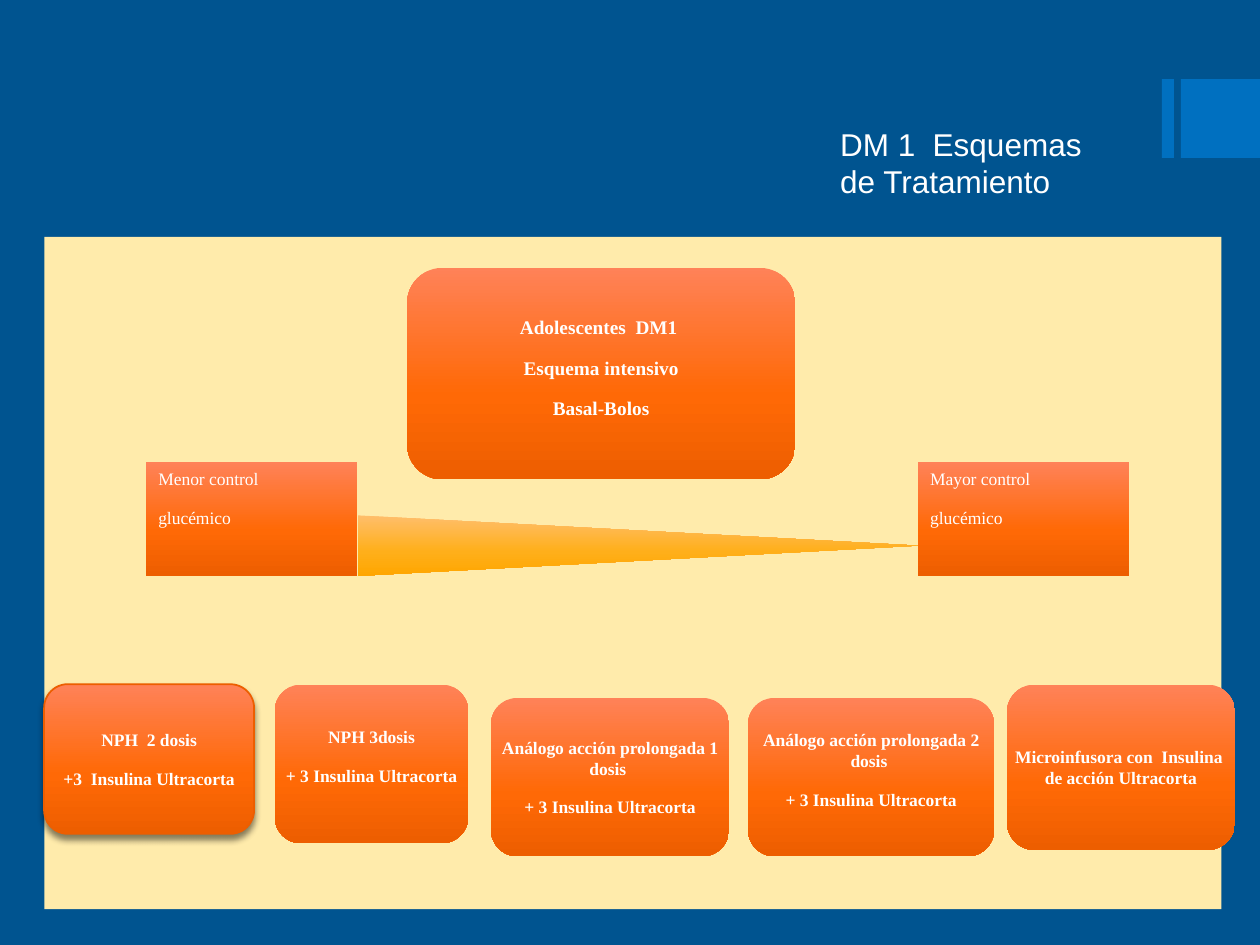
from pptx import Presentation
from pptx import util as u
from pptx.dml.color import RGBColor
from pptx.enum import shapes, text
from pptx.oxml import parse_xml
from pptx.oxml.ns import nsdecls, qn

NAVY = RGBColor(0x00, 0x54, 0x90)
BLUE = RGBColor(0x00, 0x70, 0xC0)
CREAM = RGBColor(0xFF, 0xEB, 0xAB)
WHITE = RGBColor(0xFF, 0xFF, 0xFF)
RUST = RGBColor(0xED, 0x5E, 0x00)
ORANGE = (RGBColor(0xFF, 0x82, 0x58), RGBColor(0xFF, 0x69, 0x06), RUST)
AMBER = (RGBColor(0xFF, 0xBE, 0x6B), RGBColor(0xFF, 0xAF, 0x1A), RGBColor(0xFF, 0xA6, 0x00))
KIND = shapes.MSO_SHAPE


class Board:
    sans = "Arial"
    serif = "Times New Roman"

    def __init__(self, deck):
        self.slide = deck.slides.add_slide(deck.slide_layouts[6])
        back = self.slide.background.fill
        back.solid()
        back.fore_color.rgb = NAVY

    def letter(self, frame, lines, size, font, bold=False, align=text.PP_ALIGN.LEFT, gap=0):
        frame.word_wrap = True
        frame.text = "\n".join(lines)
        for para in frame.paragraphs:
            para.alignment = align
            para.space_after = u.Pt(gap)
            for run in para.runs:
                run.font.name = font
                run.font.size = u.Pt(size)
                run.font.bold = bold
                run.font.color.rgb = WHITE

    def shape(self, kind, area):
        item = self.slide.shapes.add_shape(kind, *map(u.Pt, area))
        item.shadow.inherit = False
        item.line.fill.background()
        return item

    def block(self, area, color):
        item = self.shape(KIND.RECTANGLE, area)
        item.fill.solid()
        item.fill.fore_color.rgb = color

    def blend(self, kind, area, colors):
        item = self.shape(kind, area)
        item.fill.gradient()
        item.fill.gradient_angle = 270
        grad = item.element.spPr.find(qn("a:gradFill"))
        stops = "".join(
            f'<a:gs pos="{spot * 1000}"><a:srgbClr val="{color}"/></a:gs>'
            for spot, color in zip((0, 60, 100), colors)
        )
        grad.replace(
            grad.find(qn("a:gsLst")),
            parse_xml(f'<a:gsLst {nsdecls("a")}>{stops}</a:gsLst>'),
        )
        return item

    def title(self, area, words):
        box = self.slide.shapes.add_textbox(*map(u.Pt, area))
        self.letter(box.text_frame, [words], 18, self.sans)

    def label(self, area, lines):
        item = self.blend(KIND.RECTANGLE, area, ORANGE)
        item.text_frame.vertical_anchor = text.MSO_ANCHOR.TOP
        self.letter(item.text_frame, lines, 10, self.serif, gap=10)

    def card(self, area, lines, size=10, lift=0):
        item = self.blend(KIND.ROUNDED_RECTANGLE, area, ORANGE)
        item.adjustments[0] = 0.167
        frame = item.text_frame
        frame.margin_left = frame.margin_top = frame.margin_right = 0
        frame.margin_bottom = u.Pt(lift)
        frame.vertical_anchor = text.MSO_ANCHOR.MIDDLE
        self.letter(frame, lines, size, self.serif, True, text.PP_ALIGN.CENTER, 10)
        return item

    def float_up(self, item):
        item.adjustments[0] = 0.158
        item.line.color.rgb = RUST
        item.line.width = u.Pt(1)
        item.element.spPr.find(qn("a:effectLst")).append(parse_xml(
            f'<a:outerShdw {nsdecls("a")} blurRad="{u.Pt(3.8)}" dist="{u.Pt(3)}" '
            'dir="5400000" rotWithShape="0"><a:srgbClr val="000000">'
            '<a:alpha val="48000"/></a:srgbClr></a:outerShdw>'
        ))

    def wedge(self, area):
        item = self.blend(KIND.RIGHT_ARROW, area, AMBER)
        item.adjustments[0] = 0.5
        item.adjustments[1] = 12.57


def main():
    deck = Presentation()
    deck.slide_width, deck.slide_height = u.Pt(720), u.Pt(540)
    board = Board(deck)

    for left, width in ((664, 6.8), (674.8, 45.2)):
        board.block((left, 45.2, width, 45), BLUE)
    board.title((473, 67.7, 177, 24), "DM 1  Esquemas de Tratamiento")
    board.block((25.4, 135.3, 672.6, 384.3), CREAM)

    board.card(
        (232.6, 153.1, 221.8, 120.8),
        ["Adolescentes  DM1 ", "Esquema intensivo", "Basal-Bolos"],
        size=11, lift=7,
    )

    bolus = "+ 3 Insulina Ultracorta"
    first = board.card(
        (25.2, 391, 120, 85.5), ["NPH  2 dosis", "+3  Insulina Ultracorta"]
    )
    board.float_up(first)
    board.card((157, 391.2, 110.6, 90.7), ["NPH 3dosis", bolus], lift=9)
    for left, width, dose, lift in ((280.6, 136, 1, 0), (427.5, 140.6, 2, 9)):
        board.card(
            (left, 398.8, width, 90.5),
            [f"Análogo acción prolongada {dose} dosis ", bolus], lift=lift,
        )
    board.card(
        (575.4, 391.2, 130.3, 94.5),
        ["Microinfusora con  Insulina  de acción Ultracorta"],
    )

    board.wedge((204.4, 294.5, 320.3, 34.6))
    for left, level in ((83.4, "Menor"), (524.4, "Mayor")):
        board.label((left, 264, 120.8, 65), [f"{level} control", "glucémico"])

    deck.save("out.pptx")


if __name__ == "__main__":
    main()
